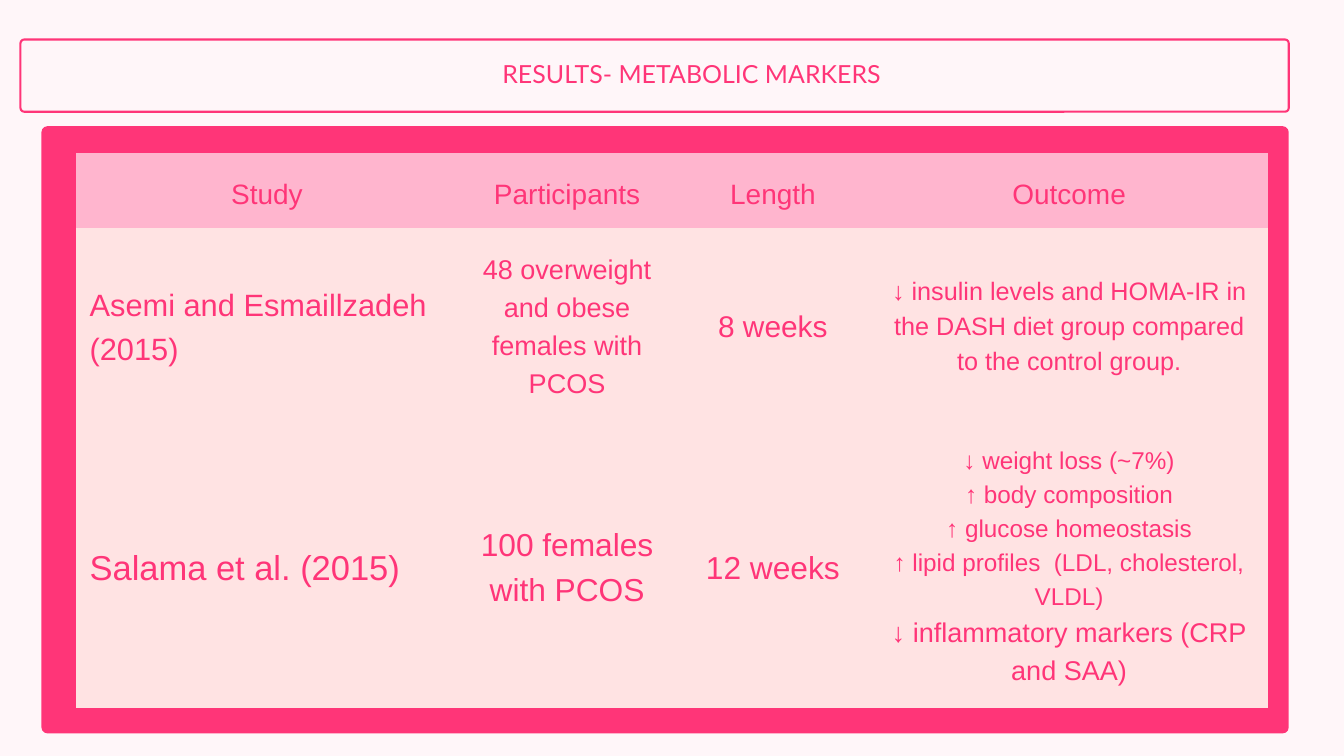
import pptx
import pptx.util
import pptx.dml.color
import pptx.enum.shapes
import pptx.enum.text
import pptx.oxml
import pptx.oxml.ns

Pt = pptx.util.Pt
RGBColor = pptx.dml.color.RGBColor
ALIGN = pptx.enum.text.PP_ALIGN
ANCHOR = pptx.enum.text.MSO_ANCHOR

PINK = RGBColor(0xFF, 0x35, 0x78)
HEADER_FILL = RGBColor(0xFF, 0xB5, 0xCE)
BODY_FILL = RGBColor(0xFF, 0xE3, 0xE3)
BACKGROUND = RGBColor(0xFF, 0xF6, 0xF9)

LINE_RATIO = 1.4
CELL_MARGIN = 15
COLUMN_WIDTHS = (410.1, 233.1, 207.9, 426.9)
ROW_HEIGHTS = (79.9, 205.2, 309.6)

# Each cell is a list of (text, size) paragraphs
ROWS = [
    [[(name, 30)] for name in ("Study", "Participants", "Length", "Outcome")],
    [
        [("Asemi and Esmaillzadeh (2015)", 33)],
        [("48 overweight and obese females with PCOS", 29)],
        [("8 weeks", 32)],
        [("↓ insulin levels and HOMA-IR in the DASH diet group compared "
          "to the control group.", 27)],
    ],
    [
        [("Salama et al. (2015)", 37)],
        [("100 females with PCOS", 34)],
        [("12 weeks", 34)],
        [
            ("↓ weight loss (~7%)", 26),
            ("↑ body composition", 26),
            ("↑ glucose homeostasis", 26),
            ("↑ lipid profiles  (LDL, cholesterol, VLDL)", 26),
            ("↓ inflammatory markers (CRP and SAA)", 29),
        ],
    ],
]


def write_paragraph(p, text, size, font, align):
    p.text = text
    p.alignment = align
    p.line_spacing = Pt(round(size * LINE_RATIO, 1))
    for r in p.runs:
        r.font.size = Pt(size)
        r.font.name = font
        r.font.color.rgb = PINK


def add_frame(s, left, top, width, height, radius, filled):
    sp = s.shapes.add_shape(
        pptx.enum.shapes.MSO_SHAPE.ROUNDED_RECTANGLE,
        Pt(left), Pt(top), Pt(width), Pt(height))
    sp.adjustments[0] = radius / height
    sp.shadow.inherit = False
    if filled:
        sp.fill.solid()
        sp.fill.fore_color.rgb = PINK
        sp.line.fill.background()
    else:
        sp.fill.background()
        sp.line.color.rgb = PINK
        sp.line.width = Pt(2.25)


def add_title(s, text):
    sp = s.shapes.add_textbox(Pt(454.3), Pt(57.6), Pt(573.8), Pt(37.4))
    tf = sp.text_frame
    tf.word_wrap = True
    tf.margin_left = tf.margin_top = tf.margin_right = tf.margin_bottom = 0
    write_paragraph(tf.paragraphs[0], text, 26.7, "Lato", ALIGN.CENTER)


def clear_borders(cell):
    properties = cell._tc.get_or_add_tcPr()
    for i, side in enumerate(("lnL", "lnR", "lnT", "lnB")):
        border = pptx.oxml.parse_xml(
            f'<a:{side} {pptx.oxml.ns.nsdecls("a")} w="0"><a:noFill/></a:{side}>')
        properties.insert(i, border)


def fill_cell(cell, paragraphs, fill, align):
    cell.fill.solid()
    cell.fill.fore_color.rgb = fill
    clear_borders(cell)
    cell.vertical_anchor = ANCHOR.MIDDLE
    cell.margin_left = cell.margin_right = Pt(CELL_MARGIN)
    cell.margin_top = cell.margin_bottom = Pt(CELL_MARGIN)
    tf = cell.text_frame
    for i, (text, size) in enumerate(paragraphs):
        p = tf.add_paragraph() if i else tf.paragraphs[0]
        write_paragraph(p, text, size, "Arial", align)


def add_results_table(s):
    table = s.shapes.add_table(
        len(ROW_HEIGHTS), len(COLUMN_WIDTHS), Pt(81), Pt(164),
        Pt(sum(COLUMN_WIDTHS)), Pt(sum(ROW_HEIGHTS))).table
    table.horz_banding = False
    for column, width in zip(table.columns, COLUMN_WIDTHS):
        column.width = Pt(width)
    for row, height in zip(table.rows, ROW_HEIGHTS):
        row.height = Pt(height)
    for i, row in enumerate(ROWS):
        for j, paragraphs in enumerate(row):
            fill = BODY_FILL if i else HEADER_FILL
            align = ALIGN.LEFT if i and j == 0 else ALIGN.CENTER
            fill_cell(table.cell(i, j), paragraphs, fill, align)


def main():
    prs = pptx.Presentation()
    prs.slide_width, prs.slide_height = Pt(1440), Pt(810)
    s = prs.slides.add_slide(prs.slide_layouts[6])
    s.background.fill.solid()
    s.background.fill.fore_color.rgb = BACKGROUND

    # Title outline and table backing
    add_frame(s, 21.9, 42.3, 1358.9, 77.4, 4, filled=False)
    add_frame(s, 44.4, 135.2, 1336.4, 650.6, 6.5, filled=True)

    # Title and results
    add_title(s, "RESULTS- METABOLIC MARKERS")
    add_results_table(s)
    prs.save("out.pptx")


if __name__ == "__main__":
    main()
